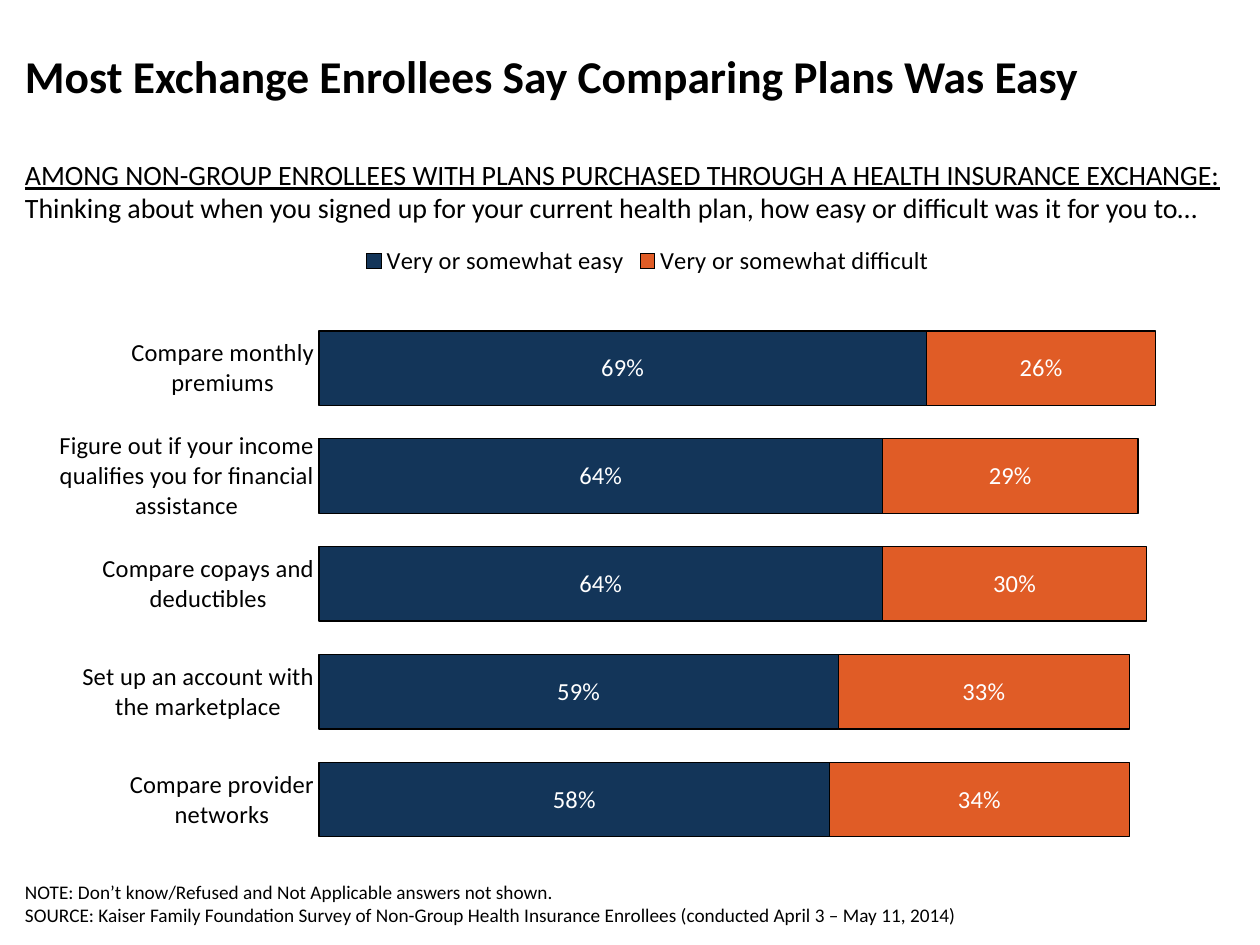
from lxml import etree
from pptx import Presentation
from pptx import util as u
from pptx.chart.data import CategoryChartData
from pptx.dml.color import RGBColor
from pptx.enum import chart as charts, text as texts
from pptx.oxml.ns import qn


def color(value):
    return RGBColor.from_string(value)


class SlideBuilder:
    font_name = "Calibri"
    ink = "000000"
    label_ink = "FFFFFF"

    def __init__(self, slide):
        self.slide = slide

    def style(self, font, size, ink=None):
        font.name = self.font_name
        font.size = u.Pt(size)
        font.color.rgb = color(ink or self.ink)

    def text(self, box, lines, size, anchor, bold=False, underlined=()):
        shape = self.slide.shapes.add_textbox(*map(u.Pt, box))
        frame = shape.text_frame
        frame.word_wrap = True
        frame.vertical_anchor = anchor
        for index, line in enumerate(lines):
            paragraph = frame.add_paragraph() if index else frame.paragraphs[0]
            paragraph.text = line
            self.style(paragraph.font, size)
            paragraph.font.bold = bold
            paragraph.font.underline = index in underlined

    def stacked_bars(self, box, categories, series, plot_layout):
        data = CategoryChartData(number_format="0%")
        data.categories = categories
        for name, _, values in series:
            data.add_series(name, values)
        chart = self.slide.shapes.add_chart(
            charts.XL_CHART_TYPE.BAR_STACKED, *map(u.Pt, box), data).chart
        self.style(chart.font, 13)
        chart.has_title = False
        chart.has_legend = True
        chart.legend.position = charts.XL_LEGEND_POSITION.TOP
        chart.legend.include_in_layout = False
        self.style(chart.legend.font, 14)

        category_axis = chart.category_axis
        category_axis.major_tick_mark = charts.XL_TICK_MARK.NONE
        category_axis.format.line.fill.background()
        self.style(category_axis.tick_labels.font, 14)
        value_axis = chart.value_axis
        value_axis.minimum_scale = 0
        value_axis.maximum_scale = 1.05
        value_axis.has_major_gridlines = False
        value_axis.visible = False

        plot = chart.plots[0]
        plot.gap_width = 45
        plot.overlap = 100
        plot.vary_by_categories = False
        for bars, (_, fill, _) in zip(plot.series, series):
            bars.format.fill.solid()
            bars.format.fill.fore_color.rgb = color(fill)
            bars.format.line.color.rgb = color(self.ink)
            bars.format.line.width = u.Pt(0.75)
            labels = bars.data_labels
            labels.show_value = True
            labels.number_format = "0%"
            labels.number_format_is_linked = False
            labels.position = charts.XL_LABEL_POSITION.CENTER
            self.style(labels.font, 14, self.label_ink)
        self.place_plot(chart, plot_layout)

    def place_plot(self, chart, plot_layout):
        area = chart.element.find(".//" + qn("c:plotArea"))
        for layout in area.findall(qn("c:layout")):
            area.remove(layout)
        layout = etree.Element(qn("c:layout"))
        manual = etree.SubElement(layout, qn("c:manualLayout"))
        settings = [("layoutTarget", "inner"), ("xMode", "edge"), ("yMode", "edge")]
        settings += zip("xywh", plot_layout)
        for tag, value in settings:
            etree.SubElement(manual, qn("c:" + tag)).set("val", str(value))
        area.insert(0, layout)


def main():
    presentation = Presentation()
    presentation.slide_width = u.Pt(720)
    presentation.slide_height = u.Pt(540)
    builder = SlideBuilder(
        presentation.slides.add_slide(presentation.slide_layouts[6]))
    anchors = texts.MSO_ANCHOR

    builder.text((7.2, 7.2, 705.6, 72),
                 ["Most Exchange Enrollees Say Comparing Plans Was Easy"],
                 26, anchors.MIDDLE, bold=True)
    builder.stacked_bars(
        (27.4, 132.5, 685.4, 359.3),
        ["Compare provider networks",
         "Set up an account with the marketplace",
         "Compare copays and deductibles",
         "Figure out if your income qualifies you for financial assistance",
         "Compare monthly premiums"],
        [("Very or somewhat easy", "133559", (0.58, 0.59, 0.64, 0.64, 0.69)),
         ("Very or somewhat difficult", "E05C26", (0.34, 0.33, 0.3, 0.29, 0.26))],
        (0.226, 0.131, 0.771, 0.858))
    builder.text((7.2, 86.4, 705.6, 46),
                 ["AMONG NON-GROUP ENROLLEES WITH PLANS PURCHASED THROUGH A HEALTH INSURANCE EXCHANGE:",
                  "Thinking about when you signed up for your current health plan, how easy or difficult was it for you to…"],
                 16, anchors.TOP, underlined=(0,))
    builder.text((7.2, 489.6, 655.2, 43.2),
                 ["NOTE: Don’t know/Refused and Not Applicable answers not shown.",
                  "SOURCE: Kaiser Family Foundation Survey of Non-Group Health Insurance Enrollees (conducted April 3 – May 11, 2014)"],
                 11, anchors.BOTTOM)
    presentation.save("out.pptx")


if __name__ == "__main__":
    main()
